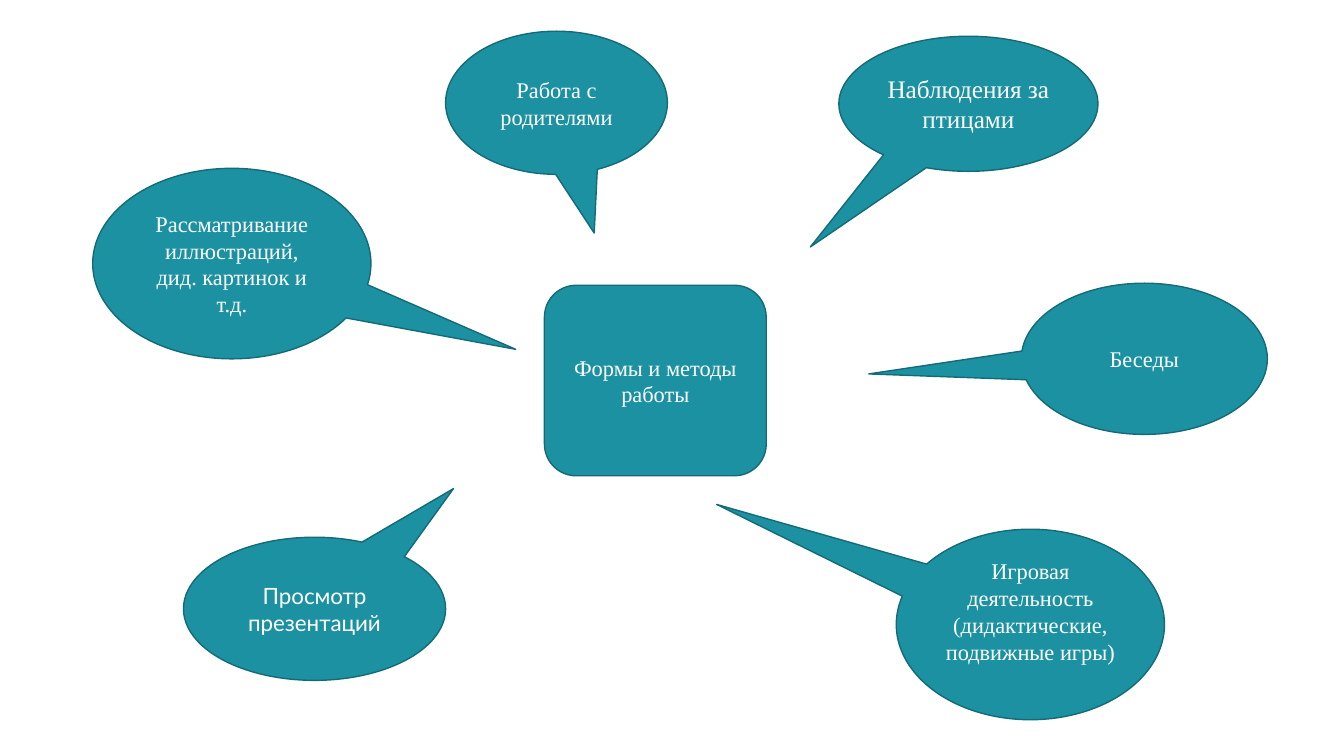
from dataclasses import dataclass

from pptx import Presentation
from pptx.dml.color import RGBColor
from pptx.enum.shapes import MSO_SHAPE
from pptx.enum.text import MSO_ANCHOR, PP_ALIGN
from pptx.util import Inches, Pt


@dataclass(frozen=True)
class Theme:
    """Colours, fonts and type sizes of the slide."""

    background: RGBColor = RGBColor(0xFF, 0xFF, 0xFF)
    fill: RGBColor = RGBColor(0x1B, 0x91, 0xA1)
    outline: RGBColor = RGBColor(0x14, 0x6B, 0x77)
    text: RGBColor = RGBColor(0xFF, 0xFF, 0xFF)
    serif: str = "Times New Roman"
    sans: str = "Lato"
    body: int = 16
    large: int = 18


class MindMap:
    """Draws a central topic and its speech balloons on one slide."""

    def __init__(self, slide, theme):
        self.slide = slide
        self.theme = theme
        background = slide.background.fill
        background.solid()
        background.fore_color.rgb = theme.background

    def bubble(self, kind, box, text, font=None, size=None, bottom=0.05):
        """Add one filled shape with centred text."""
        theme = self.theme
        shape = self.slide.shapes.add_shape(kind, *map(Inches, box))
        shape.shadow.inherit = False
        shape.fill.solid()
        shape.fill.fore_color.rgb = theme.fill
        shape.line.color.rgb = theme.outline
        shape.line.width = Pt(1)
        frame = shape.text_frame
        frame.word_wrap = True
        frame.vertical_anchor = MSO_ANCHOR.MIDDLE
        frame.margin_bottom = Inches(bottom)
        frame.text = text
        for paragraph in frame.paragraphs:
            paragraph.alignment = PP_ALIGN.CENTER
            paragraph.font.name = font or theme.serif
            paragraph.font.size = Pt(size or theme.body)
            paragraph.font.color.rgb = theme.text
        return shape

    def topic(self, box, text):
        """Add the central rounded rectangle."""
        return self.bubble(MSO_SHAPE.ROUNDED_RECTANGLE, box, text)

    def callout(self, box, tip, text, **style):
        """Add an oval balloon whose tip is relative to its centre."""
        shape = self.bubble(MSO_SHAPE.OVAL_CALLOUT, box, text, **style)
        for index, offset in enumerate(tip):
            shape.adjustments[index] = offset
        return shape


def main():
    """Build and save the slide."""
    presentation = Presentation()
    presentation.slide_width = Inches(13.33)
    presentation.slide_height = Inches(7.5)
    theme = Theme()
    slide = presentation.slides.add_slide(presentation.slide_layouts[6])
    mind_map = MindMap(slide, theme)

    mind_map.topic((5.4, 2.83, 2.2, 1.89), "Формы и методы работы")
    mind_map.callout((8.32, 0.36, 2.57, 1.34), (-0.61, 1.06),
                     "Наблюдения за птицами", size=theme.large)
    mind_map.callout((10.13, 2.81, 2.44, 1.5), (-1.12, 0.1), "Беседы")
    mind_map.callout((4.42, 0.31, 2.2, 1.42), (0.17, 0.91),
                     "Работа с родителями")
    mind_map.callout((0.92, 1.67, 2.76, 1.89), (1.02, 0.45),
                     "Рассматривание иллюстраций, дид. картинок и т.д.")
    mind_map.callout((1.82, 5.33, 2.6, 1.42), (0.53, -0.84),
                     "Просмотр\nпрезентаций", font=theme.sans)
    mind_map.callout((8.89, 5.25, 2.66, 1.89), (-1.17, -0.63),
                     "Игровая деятельность (дидактические, подвижные игры)",
                     bottom=0.32)

    presentation.save("out.pptx")


if __name__ == "__main__":
    main()
